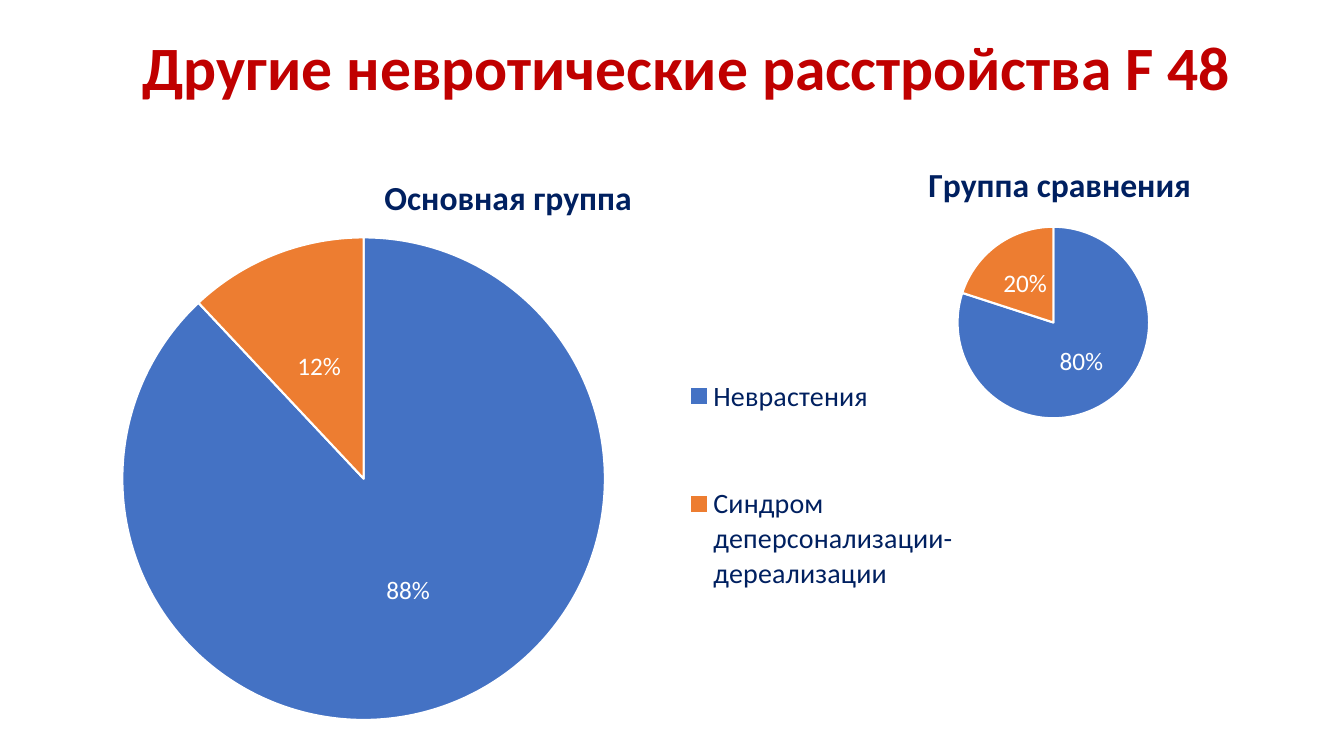
from lxml.etree import SubElement
from pptx import Presentation
from pptx.chart.data import CategoryChartData
from pptx.dml.color import RGBColor
from pptx.enum.chart import XL_CHART_TYPE, XL_LABEL_POSITION, XL_LEGEND_POSITION
from pptx.enum.text import MSO_ANCHOR, PP_ALIGN
from pptx.oxml.ns import qn
from pptx.util import Pt

FONT = "Calibri"
RED, NAVY, WHITE = "C00000", "002060", "FFFFFF"
SLICES = ("4472C4", "ED7D31")


def rgb(value):
    return RGBColor.from_string(value)


def style_font(font, size, color, bold=False):
    font.name = FONT
    font.size = Pt(size)
    font.bold = bold
    font.color.rgb = rgb(color)


def add_text(s, text, box, size, color, bold=False):
    sp = s.shapes.add_textbox(*map(Pt, box))
    tf = sp.text_frame
    tf.word_wrap = True
    tf.vertical_anchor = MSO_ANCHOR.MIDDLE
    p = tf.paragraphs[0]
    p.alignment = PP_ALIGN.CENTER
    p.line_spacing = 0.9
    r = p.add_run()
    r.text = text
    style_font(r.font, size, color, bold)


def place(element, index, inner=False, **fractions):
    for old in element.findall(qn("c:layout")):
        element.remove(old)
    layout = element.makeelement(qn("c:layout"))
    element.insert(index, layout)
    manual = SubElement(layout, qn("c:manualLayout"))
    if inner:
        SubElement(manual, qn("c:layoutTarget"), val="inner")
    for key in "xy":
        SubElement(manual, qn(f"c:{key}Mode"), val="edge")
    for key, value in fractions.items():
        SubElement(manual, qn(f"c:{key}"), val=str(value))


def add_legend(chart, area):
    chart.has_legend = True
    legend = chart.legend
    legend.position = XL_LEGEND_POSITION.RIGHT
    legend.include_in_layout = False
    style_font(legend.font, 20, NAVY)
    place(legend._element, 1, **area)


def add_pie(s, title, box, categories, values, title_at, plot_area, legend_area=None):
    data = CategoryChartData(number_format="General")
    data.categories = categories
    data.add_series(title, values)
    chart = s.shapes.add_chart(XL_CHART_TYPE.PIE, *map(Pt, box), data).chart
    style_font(chart.font, 10, "000000")

    chart.has_title = True
    p = chart.chart_title.text_frame.paragraphs[0]
    r = p.add_run()
    r.text = title
    style_font(r.font, 24, NAVY, bold=True)
    place(chart.chart_title._element, 1, **title_at)

    plot = chart.plots[0]
    plot.vary_by_categories = True
    place(chart._chartSpace.chart.plotArea, 0, inner=True, **plot_area)
    for i, color in enumerate(SLICES):
        fmt = plot.series[0].points[i].format
        fmt.fill.solid()
        fmt.fill.fore_color.rgb = rgb(color)
        fmt.line.color.rgb = rgb(WHITE)
        fmt.line.width = Pt(1.5)

    labels = plot.series[0].data_labels
    labels.show_percentage = True
    labels.show_value = False
    labels.number_format = "0%"
    labels.number_format_is_linked = False
    labels.position = XL_LABEL_POSITION.CENTER
    style_font(labels.font, 18, WHITE)

    chart.has_legend = False
    if legend_area:
        add_legend(chart, legend_area)


def main():
    prs = Presentation()
    prs.slide_width, prs.slide_height = Pt(960), Pt(540)
    s = prs.slides.add_slide(prs.slide_layouts[6])
    add_text(s, "Другие невротические расстройства F 48",
             (77, 17.3, 828, 66), 44, RED, bold=True)
    add_pie(s, "Основная группа", (10, 99.4, 703.5, 425.5),
            ("Неврастения", "Синдром деперсонализации-дереализации"), (88, 12),
            title_at=dict(x=0.37, y=0.05),
            plot_area=dict(x=0.11, y=0.16, w=0.49, h=0.82),
            legend_area=dict(x=0.67, y=0.28, w=0.3, h=0.6))
    add_pie(s, "Группа сравнения", (572.4, 96.5, 360, 216),
            ("1", "2"), (80, 20),
            title_at=dict(x=0.24, y=0.07),
            plot_area=dict(x=0.31, y=0.3, w=0.38, h=0.64))
    prs.save("out.pptx")


if __name__ == "__main__":
    main()
